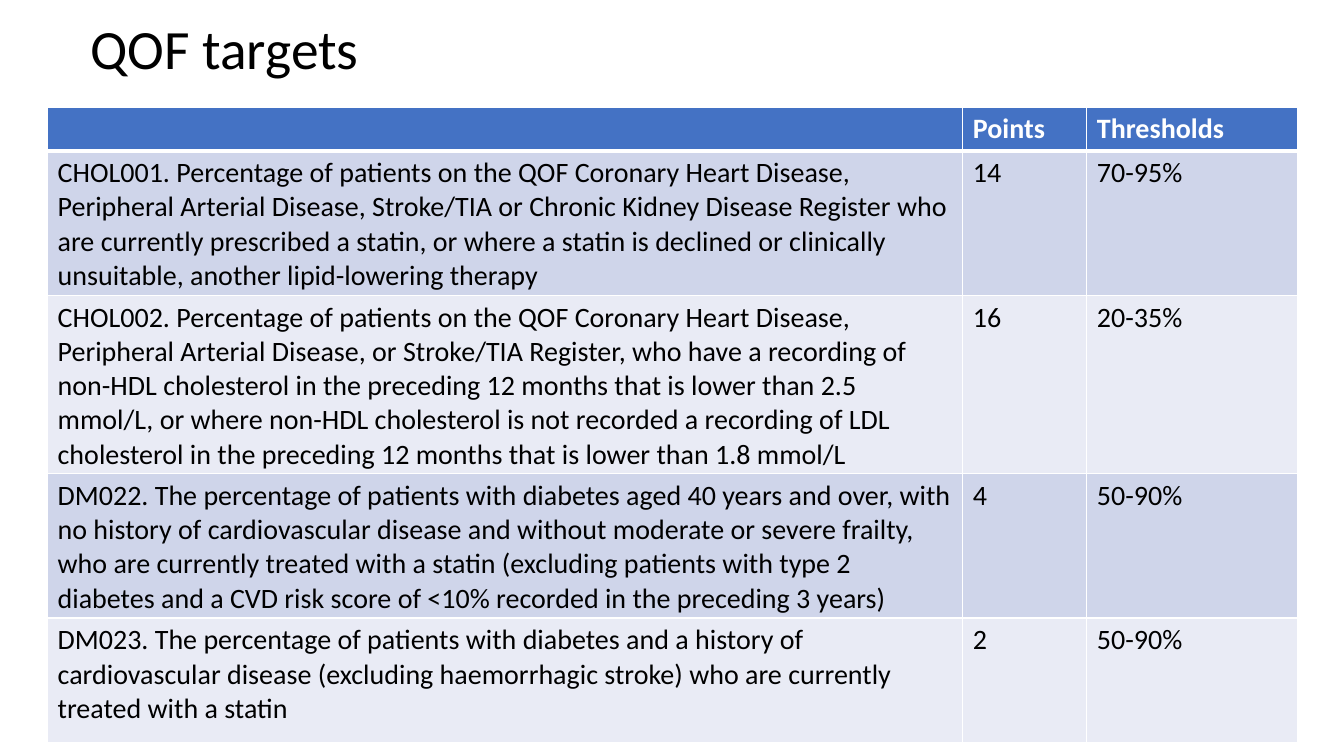
from dataclasses import dataclass

from lxml import etree
from pptx import Presentation
from pptx import util as u
from pptx.dml import color
from pptx.enum import text
from pptx.oxml import ns
from pptx.table import _Cell
from pptx.text.text import TextFrame

COLORS = {
    "white": "FFFFFF",
    "black": "000000",
    "header": "4472C4",
    "odd_row": "CFD5EA",
    "even_row": "E9EBF5",
}
FONT = "Calibri"
COLUMN_WIDTHS = (653.8, 88.6, 150.5)
THIN_LINE = 1
THICK_LINE = 3


@dataclass(frozen=True)
class TargetRow:
    indicator: str
    points: str
    thresholds: str
    height: float


TARGET_ROWS = (
    TargetRow("", "Points", "Thresholds", 29.5),
    TargetRow(
        "CHOL001. Percentage of patients on the QOF Coronary Heart Disease, "
        "Peripheral Arterial Disease, Stroke/TIA or Chronic Kidney Disease Register "
        "who are currently prescribed a statin, or where a statin is declined or "
        "clinically unsuitable, another lipid-lowering therapy",
        "14", "70-95%", 97.2,
    ),
    TargetRow(
        "CHOL002. Percentage of patients on the QOF Coronary Heart Disease, "
        "Peripheral Arterial Disease, or Stroke/TIA Register, who have a recording of "
        "non-HDL cholesterol in the preceding 12 months that is lower than 2.5 mmol/L, "
        "or where non-HDL cholesterol is not recorded a recording of LDL cholesterol "
        "in the preceding 12 months that is lower than 1.8 mmol/L",
        "16", "20-35%", 120.2,
    ),
    TargetRow(
        "DM022. The percentage of patients with diabetes aged 40 years and over, with "
        "no history of cardiovascular disease and without moderate or severe frailty, "
        "who are currently treated with a statin (excluding patients with type 2 "
        "diabetes and a CVD risk score of <10% recorded in the preceding 3 years)",
        "4", "50-90%", 97.2,
    ),
    TargetRow(
        "DM023. The percentage of patients with diabetes and a history of "
        "cardiovascular disease (excluding haemorrhagic stroke) who are currently "
        "treated with a statin",
        "2", "50-90%", 89.3,
    ),
)


def write_text(frame: TextFrame, content: str, *, size: float, color_name: str,
               bold: bool = False, line_spacing: float = 1.0) -> None:
    paragraph = frame.paragraphs[0]
    paragraph.line_spacing = line_spacing
    if content:
        paragraph.add_run().text = content
    for font in [paragraph.font] + [run.font for run in paragraph.runs]:
        font.name = FONT
        font.size = u.Pt(size)
        font.bold = bold
        font.color.rgb = color.RGBColor.from_string(COLORS[color_name])


def draw_borders(cell: _Cell, top: float, bottom: float) -> None:
    properties = cell._tc.get_or_add_tcPr()
    widths = {"lnL": THIN_LINE, "lnR": THIN_LINE, "lnT": top, "lnB": bottom}
    for side, width in widths.items():
        line = etree.SubElement(properties, ns.qn(f"a:{side}"), w=str(u.Pt(width)))
        fill = etree.SubElement(line, ns.qn("a:solidFill"))
        etree.SubElement(fill, ns.qn("a:srgbClr"), val=COLORS["white"])


def add_title(slide) -> None:
    title = slide.shapes.add_textbox(u.Pt(57.6), u.Pt(10), u.Pt(828), u.Pt(54))
    frame = title.text_frame
    frame.word_wrap = True
    frame.vertical_anchor = text.MSO_ANCHOR.MIDDLE
    write_text(frame, "QOF targets", size=39.6, color_name="black", line_spacing=0.9)


def add_target_table(slide) -> None:
    table = slide.shapes.add_table(
        len(TARGET_ROWS), len(COLUMN_WIDTHS), u.Pt(34), u.Pt(76.4),
        u.Pt(sum(COLUMN_WIDTHS)), u.Pt(sum(row.height for row in TARGET_ROWS)),
    ).table
    for column, width in zip(table.columns, COLUMN_WIDTHS):
        column.width = u.Pt(width)
    for row_index, row in enumerate(TARGET_ROWS):
        table.rows[row_index].height = u.Pt(row.height)
        is_header = row_index == 0
        band = "odd_row" if row_index % 2 else "even_row"
        fill_name = "header" if is_header else band
        for column_index, content in enumerate((row.indicator, row.points, row.thresholds)):
            cell = table.cell(row_index, column_index)
            draw_borders(
                cell,
                top=THICK_LINE if row_index == 1 else THIN_LINE,
                bottom=THICK_LINE if is_header else THIN_LINE,
            )
            cell.fill.solid()
            cell.fill.fore_color.rgb = color.RGBColor.from_string(COLORS[fill_name])
            write_text(cell.text_frame, content, size=20, bold=is_header,
                       color_name="white" if is_header else "black")


def main() -> None:
    presentation = Presentation()
    presentation.slide_width = u.Pt(960)
    presentation.slide_height = u.Pt(540)
    slide = presentation.slides.add_slide(presentation.slide_layouts[6])
    add_title(slide)
    add_target_table(slide)
    presentation.save("out.pptx")


if __name__ == "__main__":
    main()
